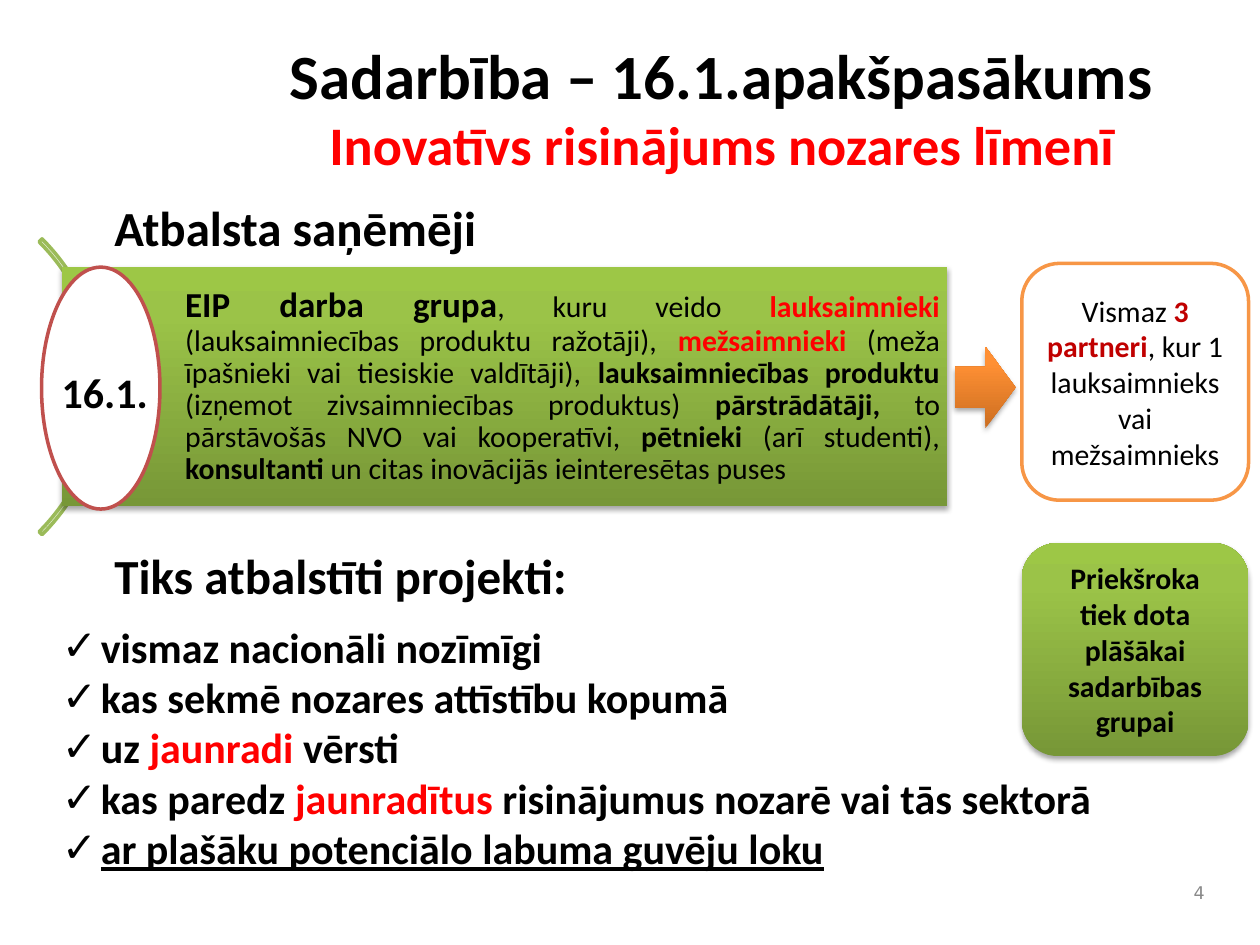
from dataclasses import dataclass
from typing import Optional

from lxml import etree
from pptx import Presentation
from pptx.dml.color import RGBColor
from pptx.enum.shapes import MSO_SHAPE
from pptx.enum.text import MSO_ANCHOR, MSO_AUTO_SIZE, PP_ALIGN
from pptx.oxml.ns import qn
from pptx.util import Inches, Pt

ARC, RECT, OVAL = MSO_SHAPE.BLOCK_ARC, MSO_SHAPE.RECTANGLE, MSO_SHAPE.OVAL
ARROW, ROUND = MSO_SHAPE.RIGHT_ARROW, MSO_SHAPE.ROUNDED_RECTANGLE
LEFT, CENTER, RIGHT, JUSTIFY = PP_ALIGN.LEFT, PP_ALIGN.CENTER, PP_ALIGN.RIGHT, PP_ALIGN.JUSTIFY
TOP, MIDDLE = MSO_ANCHOR.TOP, MSO_ANCHOR.MIDDLE
NO_FIT = MSO_AUTO_SIZE.NONE


@dataclass(frozen=True)
class Theme:
    font: str = "Calibri"
    number_font: str = "DejaVu Sans"
    black: str = "000000"
    white: str = "FFFFFF"
    red: str = "FF0000"
    dark_red: str = "C00000"
    gray: str = "898989"
    arc: str = "9BBB59"
    oval: str = "C0504D"
    orange: str = "F79646"
    green_stops: tuple = ((0, "779737"), (80, "9BC348"), (100, "9DC746"))
    orange_stops: tuple = ((0, "CC6E20"), (80, "FF9034"), (100, "FF9136"))
    title: int = 36
    subtitle: int = 31
    heading: int = 28
    item: int = 24
    lead: int = 20
    text: int = 17
    number: int = 10


T = Theme()


@dataclass(frozen=True)
class Run:
    text: str
    size: int = T.text
    color: str = T.black
    bold: bool = False
    underline: bool = False
    font: str = T.font


@dataclass(frozen=True)
class Box:
    left: float
    top: float
    width: float
    height: float

    def lengths(self) -> tuple:
        return tuple(Inches(v) for v in (self.left, self.top, self.width, self.height))


@dataclass(frozen=True)
class Block:
    kind: MSO_SHAPE
    box: Box
    fill: Optional[str] = None
    stops: Optional[tuple] = None
    line: Optional[str] = None
    runs: tuple = ()
    align: PP_ALIGN = CENTER


@dataclass(frozen=True)
class Label:
    box: Box
    run: Run
    align: PP_ALIGN = LEFT
    anchor: MSO_ANCHOR = TOP


def add_runs(p, runs: tuple) -> None:
    for run in runs:
        r = p.add_run()
        r.text = run.text
        f = r.font
        f.name, f.size, f.bold = run.font, Pt(run.size), run.bold
        f.underline = run.underline
        f.color.rgb = RGBColor.from_string(run.color)


def place(sp, box: Box) -> None:
    sp.left, sp.top, sp.width, sp.height = box.lengths()


def add_color(parent, color: str):
    clr = etree.SubElement(parent, qn("a:srgbClr"))
    clr.set("val", color)
    return clr


def shade(sp, stops: tuple) -> None:
    sp.fill.gradient()
    grad = sp._element.spPr.find(qn("a:gradFill"))
    gs_list = grad.find(qn("a:gsLst"))
    for gs in list(gs_list):
        gs_list.remove(gs)
    for position, color in stops:
        gs = etree.SubElement(gs_list, qn("a:gs"))
        gs.set("pos", str(position * 1000))
        add_color(gs, color)
    grad.find(qn("a:lin")).set("ang", str(270 * 60000))

    effects = sp._element.spPr.find(qn("a:effectLst"))
    shadow = etree.SubElement(effects, qn("a:outerShdw"))
    for key, value in (("blurRad", Pt(3.1)), ("dist", Pt(1.8)), ("dir", 90 * 60000)):
        shadow.set(key, str(int(value)))
    shadow.set("rotWithShape", "0")
    alpha = etree.SubElement(add_color(shadow, T.black), qn("a:alpha"))
    alpha.set("val", "35000")


def add_block(slide, block: Block):
    sp = slide.shapes.add_shape(block.kind, *block.box.lengths())
    sp.shadow.inherit = False
    if block.stops:
        shade(sp, block.stops)
    elif block.fill:
        sp.fill.solid()
        sp.fill.fore_color.rgb = RGBColor.from_string(block.fill)
    else:
        sp.fill.background()
    if block.line:
        sp.line.color.rgb = RGBColor.from_string(block.line)
        sp.line.width = Pt(2)
    else:
        sp.line.fill.background()
    if block.runs:
        tf = sp.text_frame
        tf.word_wrap, tf.vertical_anchor = True, MIDDLE
        p = tf.paragraphs[0]
        p.alignment = block.align
        add_runs(p, block.runs)
    return sp


def add_label(slide, label: Label) -> None:
    tf = slide.shapes.add_textbox(*label.box.lengths()).text_frame
    tf.word_wrap, tf.vertical_anchor = True, label.anchor
    p = tf.paragraphs[0]
    p.alignment = label.align
    add_runs(p, (label.run,))


def fill_title(sp) -> None:
    place(sp, Box(2.04, 0.17, 7.37, 1.35))
    tf = sp.text_frame
    tf.auto_size, tf.vertical_anchor = NO_FIT, MIDDLE
    p = tf.paragraphs[0]
    p.alignment = CENTER
    add_runs(p, (Run("Sadarbība – 16.1.apakšpasākums", T.title, bold=True),))
    p.add_line_break()
    add_runs(p, (Run("Inovatīvs risinājums nozares līmenī", T.subtitle, T.red, True),))


def fill_list(sp, items: tuple) -> None:
    place(sp, Box(0.39, 4.88, 8.46, 2.12))
    tf = sp.text_frame
    tf.auto_size, tf.word_wrap, tf.vertical_anchor = NO_FIT, False, TOP
    for i, runs in enumerate(items):
        p = tf.add_paragraph() if i else tf.paragraphs[0]
        pPr = p._p.get_or_add_pPr()
        pPr.set("marL", str(Inches(0.31)))
        pPr.set("indent", str(-Inches(0.31)))
        etree.SubElement(pPr, qn("a:buChar")).set("char", "✓")
        p.alignment, p.space_before = JUSTIFY, Pt(0)
        add_runs(p, runs)


def item(text: str, color: str = T.black, underline: bool = False) -> Run:
    return Run(text, T.item, color, True, underline)


ITEMS = (
    (item("vismaz nacionāli nozīmīgi"),),
    (item("kas sekmē nozares attīstību kopumā"),),
    (item("uz "), item("jaunradi", T.red), item(" vērsti")),
    (item("kas paredz "), item("jaunradītus", T.red), item(" risinājumus nozarē vai tās sektorā")),
    (item("ar plašāku potenciālo labuma guvēju loku", underline=True),),
)
GROUP_RUNS = (
    Run("EIP darba grupa", T.lead, bold=True), Run(", kuru veido "),
    Run("lauksaimnieki", color=T.red, bold=True), Run(" (lauksaimniecības produktu ražotāji), "),
    Run("mežsaimnieki", color=T.red, bold=True),
    Run(" (meža īpašnieki vai tiesiskie valdītāji), "),
    Run("lauksaimniecības produktu ", bold=True), Run("(izņemot zivsaimniecības produktus) "),
    Run("pārstrādātāji, ", bold=True), Run("to pārstāvošās NVO vai kooperatīvi, "),
    Run("pētnieki", bold=True), Run(" (arī studenti), "),
    Run("konsultanti", bold=True), Run(" un citas inovācijās ieinteresētas puses"),
)
PARTNER_RUNS = (
    Run("Vismaz "), Run("3 partneri", color=T.dark_red, bold=True),
    Run(", kur 1 lauksaimnieks vai mežsaimnieks"),
)
PRIORITY_RUNS = (Run("Priekšroka tiek dota plāšākai sadarbības grupai", bold=True),)
BLOCKS = (
    Block(OVAL, Box(0.33, 2.12, 0.94, 1.92), T.white, line=T.oval),
    Block(ARROW, Box(7.58, 2.75, 0.48, 0.65), stops=T.orange_stops),
    Block(ROUND, Box(8.11, 2.09, 1.8, 1.88), T.white, line=T.orange, runs=PARTNER_RUNS),
    Block(ROUND, Box(8.11, 4.31, 1.8, 1.69), stops=T.green_stops, runs=PRIORITY_RUNS),
)
LABELS = (
    Label(Box(0.39, 2.86, 0.98, 0.5), Run("16.1.", T.item, bold=True)),
    Label(Box(0.81, 1.52, 3.73, 0.57), Run("Atbalsta saņēmēji", T.heading, bold=True)),
    Label(Box(0.81, 4.28, 5.4, 0.57), Run("Tiks atbalstīti projekti:", T.heading, bold=True)),
    Label(Box(9.33, 6.92, 0.33, 0.33), Run("4", T.number, T.gray, font=T.number_font),
          RIGHT, MIDDLE),
)


def main() -> None:
    prs = Presentation()
    prs.slide_width, prs.slide_height = Inches(10), Inches(7.5)
    slide = prs.slides.add_slide(prs.slide_layouts[1])
    fill_title(slide.shapes.title)
    fill_list(slide.placeholders[1], ITEMS)

    arc = add_block(slide, Block(ARC, Box(-2.5, 1.41, 3.32, 3.32), line=T.arc))
    for i, value in enumerate((189, 27, 0.01)):
        arc.adjustments[i] = value

    group = add_block(slide, Block(RECT, Box(0.49, 2.12, 7.03, 1.9), stops=T.green_stops,
                                   runs=GROUP_RUNS, align=JUSTIFY))
    tf = group.text_frame
    tf.margin_left = Inches(0.98)
    tf.margin_top = tf.margin_right = tf.margin_bottom = Inches(0.06)
    tf.paragraphs[0].line_spacing = 0.9

    for block in BLOCKS:
        add_block(slide, block)
    for label in LABELS:
        add_label(slide, label)
    prs.save("out.pptx")


if __name__ == "__main__":
    main()
